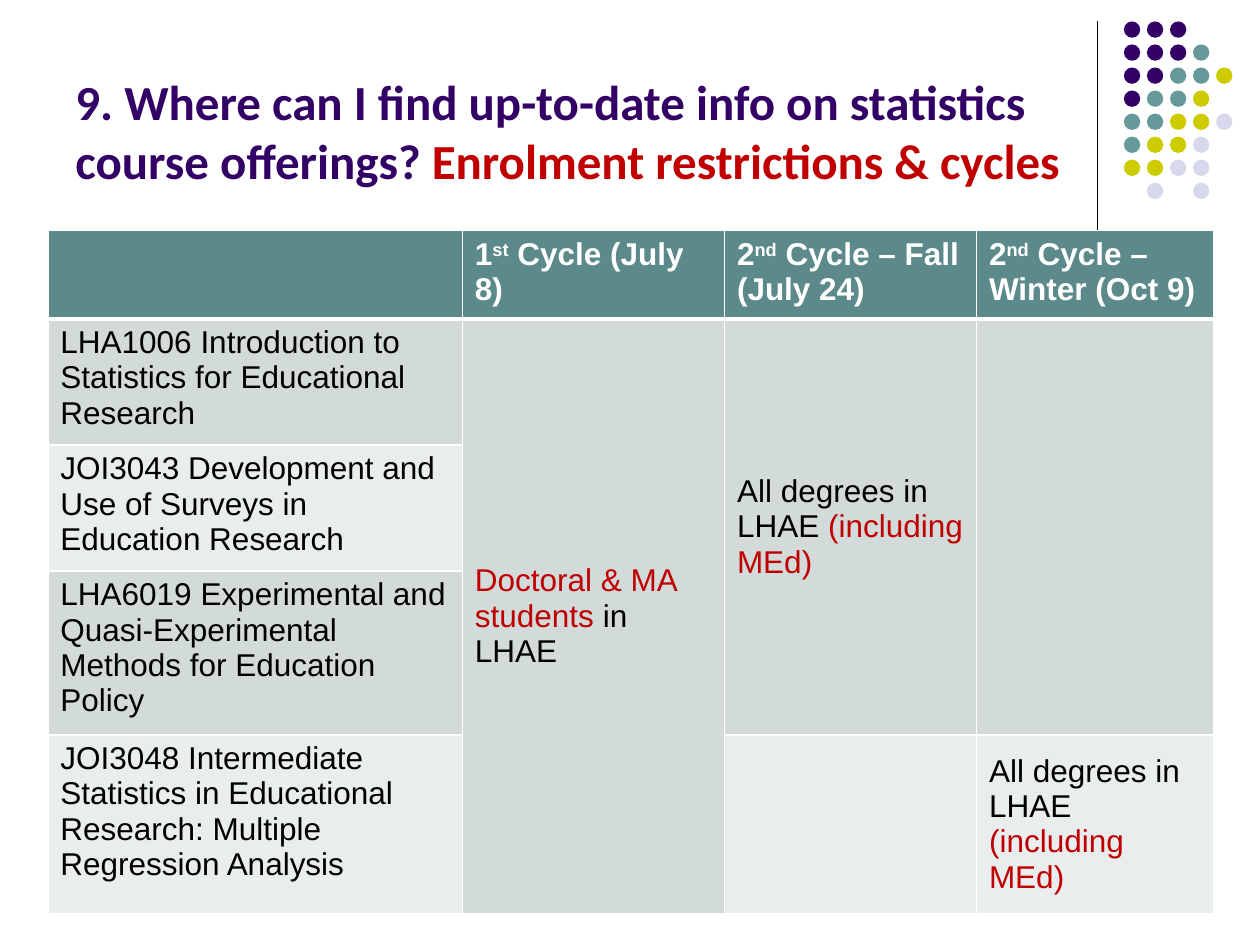
from lxml.etree import SubElement as Sub
from pptx import Presentation
from pptx.dml.color import RGBColor
from pptx.enum.shapes import MSO_CONNECTOR as Link, MSO_SHAPE as Shape
from pptx.enum.text import MSO_ANCHOR as Anchor
from pptx.oxml.ns import qn
from pptx.util import Inches, Pt

HEX = {
    "plum": "330066", "teal": "669999", "lime": "CCCC00", "mist": "D8D8EC",
    "red": "C00000", "black": "000000", "white": "FFFFFF",
    "head": "5C8A8A", "dark": "D2DADA", "light": "EAEDED",
}
TITLE = [
    ("9. Where can I find up-to-date info on statistics course offerings? ", "plum"),
    ("Enrolment restrictions & cycles", "red"),
]
DOTS = ["PPP", "PPPT", "PPTTL", "PTTL", "TTLLM", "TLLM", "LLMM", " M M"]
TINTS = {"P": "plum", "T": "teal", "L": "lime", "M": "mist"}

HEADS = [
    ("1", "st", " Cycle (July 8)"),
    ("2", "nd", " Cycle – Fall (July 24)"),
    ("2", "nd", " Cycle – Winter (Oct 9)"),
]
COURSES = [
    "LHA1006 Introduction to Statistics for Educational Research",
    "JOI3043 Development and Use of Surveys in Education Research",
    "LHA6019 Experimental and Quasi-Experimental Methods for Education Policy",
    "JOI3048 Intermediate Statistics in Educational Research: Multiple Regression Analysis",
]
OPEN = [("All degrees in LHAE ", "black"), ("(including MEd)", "red")]
GROUPS = {
    (1, 1): [("Doctoral & MA students ", "red"), ("in LHAE", "black")],
    (1, 2): OPEN,
    (4, 3): OPEN,
}
SPANS = [(1, 1, 4), (1, 2, 3), (1, 3, 3)]
COLS = [3.29, 2.08, 2, 1.88]
ROWS = [0.65, 0.93, 0.94, 1.22, 1.42]


def rgb(name):
    return RGBColor.from_string(HEX[name])


def write(para, text, color, size=18, face="Arial", bold=False):
    run = para.add_run()
    run.text = text
    font = run.font
    font.size, font.name, font.bold = Pt(size), face, bold
    font.color.rgb = rgb(color)
    return run


def border(cell, row):
    props = cell._tc.get_or_add_tcPr()
    for spot, side in enumerate("LRTB"):
        thick = (row, side) in [(0, "B"), (1, "T")]
        line = props.makeelement(qn("a:ln" + side), {"w": str(Pt(3 if thick else 1))})
        fill = Sub(line, qn("a:solidFill"))
        Sub(fill, qn("a:srgbClr"), val=HEX["white"])
        props.insert(spot, line)


def draw_dots(slide):
    rule = slide.shapes.add_connector(
        Link.STRAIGHT, Inches(8.71), Inches(0.17), Inches(8.71), Inches(1.83))
    rule.line.color.rgb = rgb("black")
    rule.line.width = Pt(0.75)
    Sub(rule._element.spPr, qn("a:effectLst"))
    group = slide.shapes.add_group_shape()
    step = 1.28 / 7
    for row, line in enumerate(DOTS):
        for col, key in enumerate(line):
            if key in TINTS:
                dot = group.shapes.add_shape(
                    Shape.OVAL, Inches(8.92 + col * step), Inches(0.17 + row * step),
                    Inches(0.13), Inches(0.13))
                dot.shadow.inherit = False
                dot.fill.solid()
                dot.fill.fore_color.rgb = rgb(TINTS[key])
                dot.line.fill.background()


def draw_title(slide):
    box = slide.shapes.add_textbox(Inches(0.5), Inches(0.13), Inches(8.25), Inches(1.42))
    frame = box.text_frame
    frame.word_wrap = True
    frame.vertical_anchor = Anchor.BOTTOM
    for text, color in TITLE:
        write(frame.paragraphs[0], text, color, 28, "Calibri", True)


def draw_table(slide):
    table = slide.shapes.add_table(
        len(ROWS), len(COLS), Inches(0.38), Inches(1.83),
        Inches(sum(COLS)), Inches(sum(ROWS))).table
    for col, width in zip(table.columns, COLS):
        col.width = Inches(width)
    for row, height in zip(table.rows, ROWS):
        row.height = Inches(height)
    for row in range(len(ROWS)):
        for col in range(len(COLS)):
            cell = table.cell(row, col)
            cell.fill.solid()
            cell.fill.fore_color.rgb = rgb("head" if row == 0 else "dark" if row % 2 else "light")
            border(cell, row)
    for top, col, count in SPANS:
        table.cell(top, col).merge(table.cell(top + count - 1, col))
    for col, parts in enumerate(HEADS, 1):
        para = table.cell(0, col).text_frame.paragraphs[0]
        runs = [write(para, text, "white", bold=True) for text in parts]
        runs[1]._r.get_or_add_rPr().set("baseline", "30000")
    for row, text in enumerate(COURSES, 1):
        write(table.cell(row, 0).text_frame.paragraphs[0], text, "black")
    for (row, col), parts in GROUPS.items():
        cell = table.cell(row, col)
        cell.vertical_anchor = Anchor.MIDDLE
        for text, color in parts:
            write(cell.text_frame.paragraphs[0], text, color)


def main():
    deck = Presentation()
    deck.slide_width, deck.slide_height = Inches(10), Inches(7.5)
    slide = deck.slides.add_slide(deck.slide_layouts[6])
    draw_dots(slide)
    draw_title(slide)
    draw_table(slide)
    deck.save("out.pptx")


if __name__ == "__main__":
    main()
